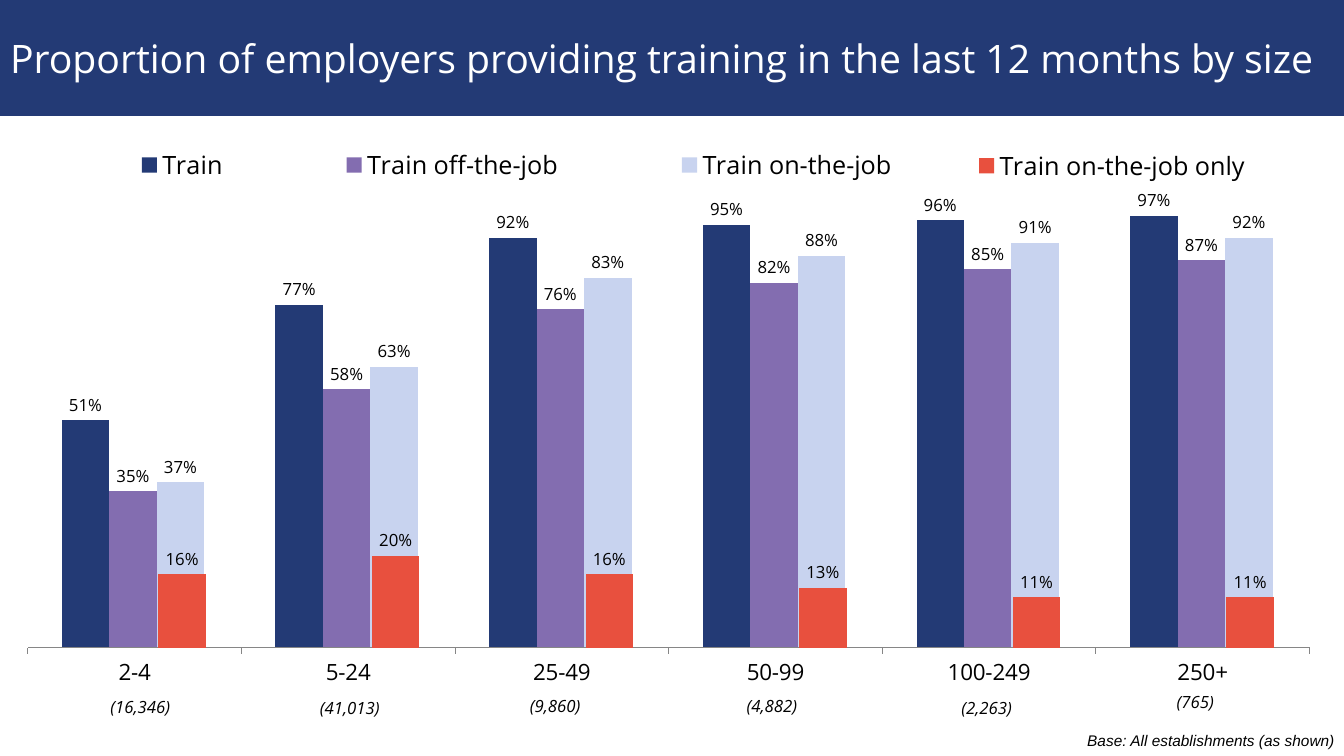
from dataclasses import dataclass

from lxml.etree import _Element
from pptx import Presentation
from pptx.chart.chart import Chart
from pptx.chart.data import CategoryChartData
from pptx.dml.color import RGBColor
from pptx.enum.chart import XL_CHART_TYPE, XL_LABEL_POSITION, XL_LEGEND_POSITION, XL_TICK_MARK
from pptx.enum.text import MSO_ANCHOR, MSO_AUTO_SIZE, PP_ALIGN
from pptx.oxml import parse_xml
from pptx.oxml.ns import nsdecls, qn
from pptx.slide import Slide
from pptx.text.text import TextFrame
from pptx.util import Cm, Pt

FONT = "Open Sans"
NAVY, PURPLE, PALE, RED = "233A75", "836DB0", "C8D3EF", "E8503E"
BLACK, WHITE, GREY = "000000", "FFFFFF", "868686"
SIZES = ["2-4", "5-24", "25-49", "50-99", "100-249", "250+"]
BLANK = [None] * len(SIZES)


@dataclass
class Bars:
    name: str
    color: str
    values: list[float | None]


@dataclass
class Box:
    x: float
    y: float
    w: float
    h: float


@dataclass
class Note:
    text: str
    box: Box
    size: int = 12
    font: str = FONT
    align: PP_ALIGN = PP_ALIGN.CENTER


def rgb(color: str) -> RGBColor:
    return RGBColor.from_string(color)


def add_run(tf: TextFrame, text: str, size: int, font: str, color: str, italic: bool = False) -> None:
    r = tf.paragraphs[0].add_run()
    r.text = text
    r.font.size, r.font.name, r.font.italic = Pt(size), font, italic
    r.font.color.rgb = rgb(color)


def set_layout(parent: _Element, index: int, box: Box, inner: bool = False) -> None:
    """Place a chart part by fractions of the chart area."""
    for old in parent.findall(qn("c:layout")):
        parent.remove(old)
    target = '<c:layoutTarget val="inner"/>' if inner else ""
    parent.insert(index, parse_xml(
        f'<c:layout {nsdecls("c")}><c:manualLayout>{target}'
        '<c:xMode val="edge"/><c:yMode val="edge"/>'
        f'<c:x val="{box.x}"/><c:y val="{box.y}"/><c:w val="{box.w}"/><c:h val="{box.h}"/>'
        '</c:manualLayout></c:layout>'))


def add_columns(slide: Slide, left: float, top: float, bars: list[Bars],
                plot_box: Box, legend_box: Box) -> Chart:
    data = CategoryChartData(number_format="0%")
    data.categories = SIZES
    for b in bars:
        data.add_series(b.name, b.values)
    chart = slide.shapes.add_chart(XL_CHART_TYPE.COLUMN_CLUSTERED, Cm(left), Cm(top),
                                   Cm(33.87), Cm(17.58), data).chart
    chart.has_title = False
    chart.font.size, chart.font.name = Pt(18), FONT
    chart.font.color.rgb = rgb(BLACK)

    # Axes
    va, ca = chart.value_axis, chart.category_axis
    va.minimum_scale, va.maximum_scale, va.major_unit = 0, 1, 0.1
    va.has_major_gridlines = va.visible = False
    ca.major_tick_mark = XL_TICK_MARK.OUTSIDE
    ca.tick_labels.font.size = Pt(16)
    ca.format.line.color.rgb = rgb(GREY)

    # Columns and their labels
    plot = chart.plots[0]
    plot.gap_width, plot.overlap, plot.vary_by_categories = 150, 0, False
    for b, series in zip(bars, plot.series):
        series.format.fill.solid()
        series.format.fill.fore_color.rgb = rgb(b.color)
        series.invert_if_negative = False
        labels = series.data_labels
        labels.show_value = True
        labels.position = XL_LABEL_POSITION.OUTSIDE_END
        labels.number_format, labels.number_format_is_linked = "0%", False
        labels.font.size = Pt(12)
        labels.font.color.rgb = rgb(BLACK)

    # Legend, leaving out series without values
    chart.has_legend = True
    chart.legend.position = XL_LEGEND_POSITION.RIGHT
    chart.legend.include_in_layout = False
    space = chart.element
    legend = space.find(".//" + qn("c:legend"))
    set_layout(legend, 1, legend_box)
    hidden = [i for i, b in enumerate(bars) if b.values == BLANK]
    for i in reversed(hidden):
        legend.insert(1, parse_xml(f'<c:legendEntry {nsdecls("c")}><c:idx val="{i}"/>'
                                   '<c:delete val="1"/></c:legendEntry>'))

    # Plot position and transparent chart area
    set_layout(space.find(".//" + qn("c:plotArea")), 0, plot_box, inner=True)
    space.find(qn("c:chart")).addnext(parse_xml(
        f'<c:spPr {nsdecls("c", "a")}><a:noFill/><a:ln><a:noFill/></a:ln></c:spPr>'))
    return chart


def add_note(slide: Slide, note: Note) -> None:
    b = note.box
    tf = slide.shapes.add_textbox(Cm(b.x), Cm(b.y), Cm(b.w), Cm(b.h)).text_frame
    tf.word_wrap = True
    tf.auto_size = MSO_AUTO_SIZE.SHAPE_TO_FIT_TEXT
    tf.paragraphs[0].alignment = note.align
    add_run(tf, note.text, note.size, note.font, BLACK, italic=True)


def main() -> None:
    prs = Presentation()
    prs.slide_width, prs.slide_height = Cm(33.87), Cm(19.05)
    slide = prs.slides.add_slide(prs.slide_layouts[5])

    # Title band
    title = slide.shapes.title
    title.left, title.top, title.width, title.height = Cm(0), Cm(0), prs.slide_width, Cm(2.92)
    title.fill.solid()
    title.fill.fore_color.rgb = rgb(NAVY)
    tf = title.text_frame
    tf.word_wrap, tf.auto_size = True, MSO_AUTO_SIZE.NONE
    tf.vertical_anchor = MSO_ANCHOR.MIDDLE
    tf.paragraphs[0].alignment = PP_ALIGN.LEFT
    add_run(tf, "Proportion of employers providing training in the last 12 months by size",
            28, FONT, WHITE)

    # All training, with the on-the-job only columns laid over it
    training = add_columns(slide, 0.66, 1.45, [
        Bars("Train", NAVY, [0.51, 0.77, 0.92, 0.95, 0.96, 0.97]),
        Bars("Train off-the-job", PURPLE, [0.35, 0.58, 0.76, 0.82, 0.85, 0.87]),
        Bars("Train on-the-job", PALE, [0.37, 0.63, 0.83, 0.88, 0.91, 0.92]),
    ], Box(0, 0.208, 0.954, 0.637), Box(0, 0.114, 0.73, 0.08))
    training.category_axis.visible = False
    add_columns(slide, 0.69, 1.47, [
        Bars("Series 1", PALE, BLANK),
        Bars("Series 2", PURPLE, BLANK),
        Bars("Train on-the-job only", RED, [0.16, 0.2, 0.16, 0.13, 0.11, 0.11]),
    ], Box(0, 0.186, 0.954, 0.659), Box(0.697, 0.114, 0.22, 0.08))

    # Base sizes
    bases = [("(16,346)", 2.39, 17.42), ("(41,013)", 7.67, 17.45), ("(9,860)", 12.85, 17.4),
             ("(4,882)", 18.31, 17.4), ("(2,263)", 23.72, 17.45), ("(765)", 28.98, 17.3)]
    for text, x, y in bases:
        add_note(slide, Note(text, Box(x, y, 2.29, 0.76)))
    add_note(slide, Note("Base: All establishments (as shown)", Box(23.27, 18.31, 10.62, 0.74),
                         11, "Arial", PP_ALIGN.RIGHT))

    prs.save("out.pptx")


if __name__ == "__main__":
    main()
